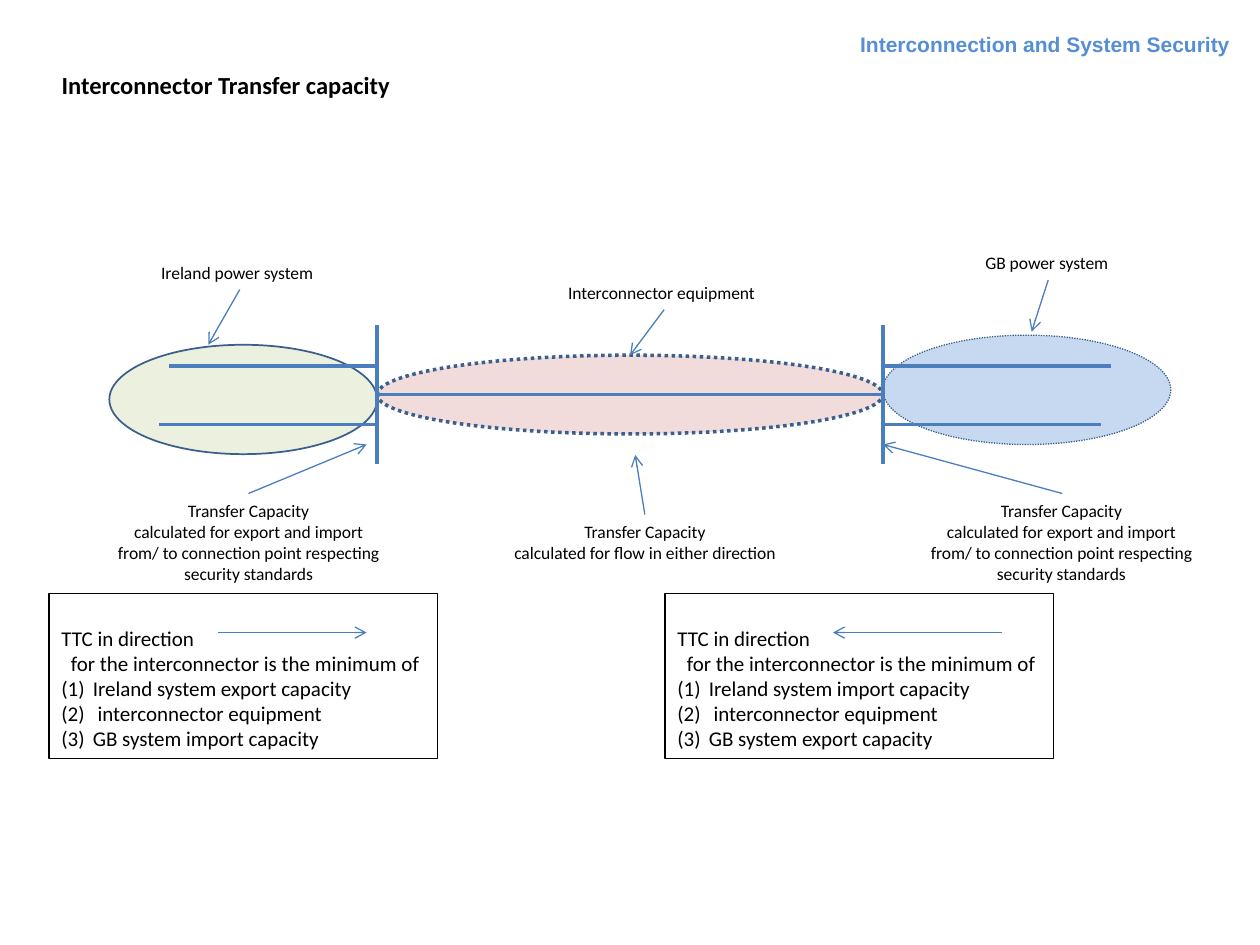
from dataclasses import dataclass

from pptx import Presentation
from pptx.dml.color import RGBColor
from pptx.enum.dml import MSO_LINE
from pptx.enum.shapes import MSO_CONNECTOR, MSO_SHAPE
from pptx.enum.text import MSO_ANCHOR, PP_ALIGN
from pptx.oxml.ns import qn
from pptx.util import Pt
from lxml.etree import SubElement


@dataclass(frozen=True)
class Theme:
    body_font: str = "Calibri"
    header_font: str = "Arial"
    ink: str = "000000"
    header: str = "558ED5"
    line: str = "4B7EBC"
    outline: str = "3A5F8C"
    ireland: str = "EBF1DE"
    link: str = "F2DCDB"
    britain: str = "C6D9F1"
    title_size: float = 14
    box_size: float = 12
    label_size: float = 10
    heavy: float = 2
    medium: float = 1
    thin: float = 0.75


class Diagram:
    def __init__(self, theme, slide):
        self.theme = theme
        self.slide = slide

    def add_run(self, paragraph, text, size, color=None, font=None, bold=False):
        run = paragraph.add_run()
        run.text = text
        run.font.name = font or self.theme.body_font
        run.font.size = Pt(size)
        run.font.bold = bold
        run.font.color.rgb = RGBColor.from_string(color or self.theme.ink)

    def title(self, bounds, text):
        heading = self.slide.shapes.title
        heading.left, heading.top, heading.width, heading.height = map(Pt, bounds)
        heading.text_frame.vertical_anchor = MSO_ANCHOR.TOP
        paragraph = heading.text_frame.paragraphs[0]
        paragraph.alignment = PP_ALIGN.LEFT
        self.add_run(paragraph, text, self.theme.title_size, bold=True)

    def text(self, bounds, lines, size, align=PP_ALIGN.LEFT, wrap=True, **style):
        block = self.slide.shapes.add_textbox(*map(Pt, bounds))
        block.text_frame.word_wrap = wrap
        for index, line in enumerate(lines):
            frame = block.text_frame
            paragraph = frame.add_paragraph() if index else frame.paragraphs[0]
            paragraph.alignment = align
            self.add_run(paragraph, line, size, **style)
        return block

    def label(self, bounds, text):
        self.text(bounds, [text], self.theme.label_size, wrap=False)

    def note(self, bounds, lines):
        self.text(bounds, lines, self.theme.label_size, PP_ALIGN.CENTER)

    def indent(self, paragraph, margin, hanging=0):
        properties = paragraph._p.get_or_add_pPr()
        properties.set("marL", str(Pt(margin)))
        properties.set("indent", str(Pt(-hanging)))
        return properties

    def capacity_box(self, bounds, intro, limits):
        box = self.text(bounds, intro + limits, self.theme.box_size, wrap=False)
        box.line.color.rgb = RGBColor.from_string(self.theme.ink)
        box.line.width = Pt(self.theme.thin)
        box.text_frame.margin_top = Pt(18.25)
        paragraphs = box.text_frame.paragraphs
        self.indent(paragraphs[1], 5.4)
        for paragraph, margin in zip(paragraphs[len(intro):], (18, 20.7, 18)):
            properties = self.indent(paragraph, margin, margin)
            SubElement(properties, qn("a:buFont"), typeface="+mj-lt")
            SubElement(properties, qn("a:buAutoNum"), type="arabicParenBoth")

    def ellipse(self, bounds, fill, width, dash=None):
        area = self.slide.shapes.add_shape(MSO_SHAPE.OVAL, *map(Pt, bounds))
        area.shadow.inherit = False
        area.fill.solid()
        area.fill.fore_color.rgb = RGBColor.from_string(fill)
        area.line.color.rgb = RGBColor.from_string(self.theme.outline)
        area.line.width = Pt(width)
        if dash:
            area.line.dash_style = dash

    def line(self, ends, width):
        stroke = self.slide.shapes.add_connector(MSO_CONNECTOR.STRAIGHT, *map(Pt, ends))
        stroke.line.color.rgb = RGBColor.from_string(self.theme.line)
        stroke.line.width = Pt(width)
        SubElement(stroke._element.spPr, qn("a:effectLst"))
        return stroke

    def arrow(self, ends):
        stroke = self.line(ends, self.theme.thin)
        SubElement(stroke._element.spPr.find(qn("a:ln")), qn("a:tailEnd"), type="arrow")


def main():
    deck = Presentation()
    deck.slide_width, deck.slide_height = Pt(720), Pt(540)
    theme = Theme()
    diagram = Diagram(theme, deck.slides.add_slide(deck.slide_layouts[5]))
    ireland_bus, britain_bus = 215.5, 504.5

    diagram.title((28, 36.5, 227, 24.5), "Interconnector Transfer capacity")
    diagram.text((112.5, 14.5, 597.5, 21.5), ["Interconnection and System Security"],
                 theme.box_size, PP_ALIGN.RIGHT, color=theme.header,
                 font=theme.header_font, bold=True)

    diagram.ellipse((ireland_bus, 203, britain_bus - ireland_bus, 45), theme.link,
                    theme.heavy, MSO_LINE.ROUND_DOT)
    diagram.ellipse((britain_bus, 191.5, 164.5, 62.5), theme.britain,
                    theme.thin, MSO_LINE.ROUND_DOT)
    diagram.ellipse((62.5, 197, 153, 62.5), theme.ireland, theme.medium)

    for bus in (ireland_bus, britain_bus):
        diagram.line((bus, 186, bus, 265), theme.heavy)
    diagram.line((ireland_bus, 225.5, britain_bus, 225.5), theme.heavy)
    for level, ireland_end, britain_end in ((209, 96.5, 635), (242.5, 91, 629)):
        diagram.line((ireland_end, level, ireland_bus, level), theme.heavy)
        diagram.line((britain_bus, level, britain_end, level), theme.heavy)

    for bounds, name, pointer in (
        ((85, 146, 103, 19.5), "Ireland power system", (137, 165.5, 119, 197)),
        ((556, 140.5, 86.5, 19.5), "GB power system", (599, 160, 589.5, 189.5)),
        ((317.5, 157.5, 123, 19.5), "Interconnector equipment", (379.5, 177, 360, 203)),
    ):
        diagram.label(bounds, name)
        diagram.arrow(pointer)

    system_rule = ("calculated for export and import from/ to connection point "
                   "respecting security standards")
    link_rule = "calculated for flow in either direction"
    for bounds, rule, pointer in (
        ((57, 282, 170, 92), system_rule, (142, 282, 209.5, 254)),
        ((521.5, 282, 170, 92), system_rule, (607, 282, britain_bus, 254)),
        ((283.5, 294, 170, 68), link_rule, (368.5, 294, 363, 260)),
    ):
        diagram.note(bounds, ["Transfer Capacity", rule])
        diagram.arrow(pointer)

    intro = ["TTC in direction", "for the interconnector is the minimum of"]
    for left, ireland_flow, britain_flow, start, end in (
        (28, "export", "import", 124.5, 209.5),
        (380, "import", "export", 572.5, 476),
    ):
        diagram.capacity_box((left, 339, 222, 94.5), intro, [
            f"Ireland system {ireland_flow} capacity",
            "interconnector equipment",
            f"GB system {britain_flow} capacity",
        ])
        diagram.arrow((start, 361.5, end, 361.5))

    deck.save("out.pptx")


if __name__ == "__main__":
    main()
